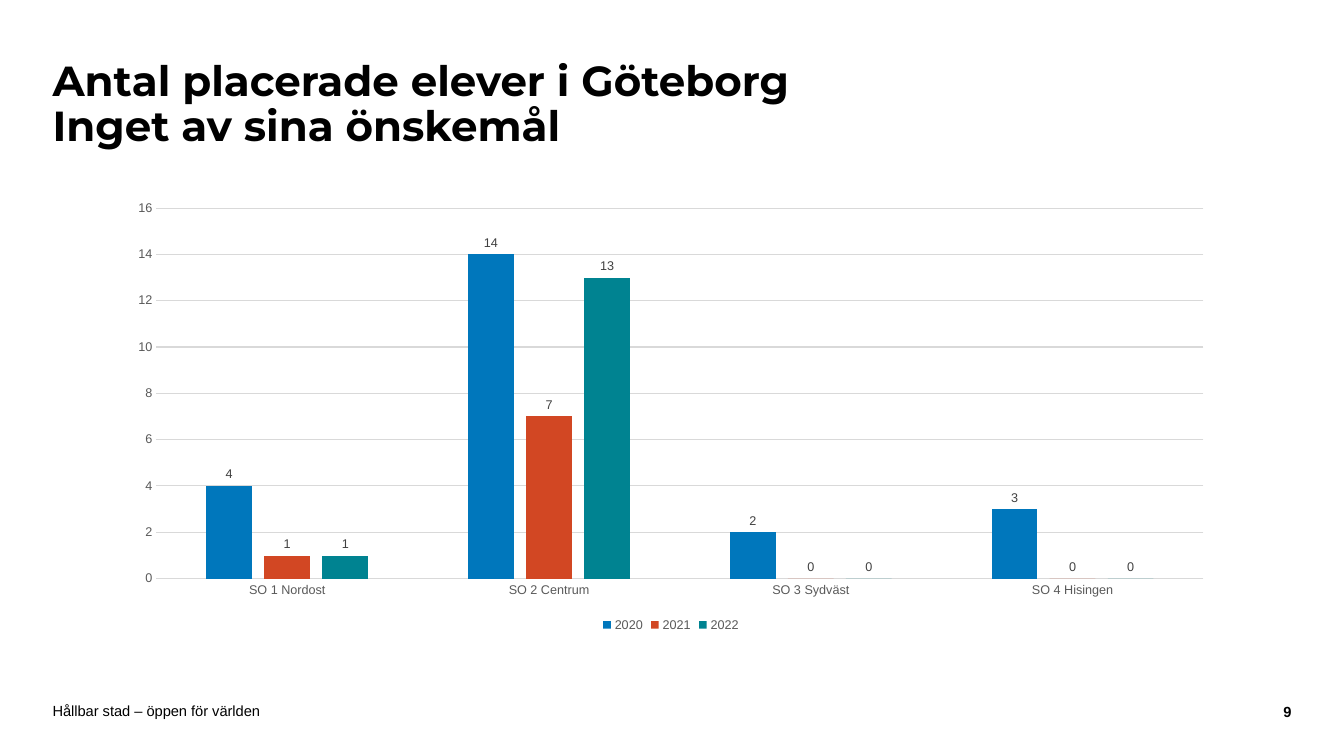
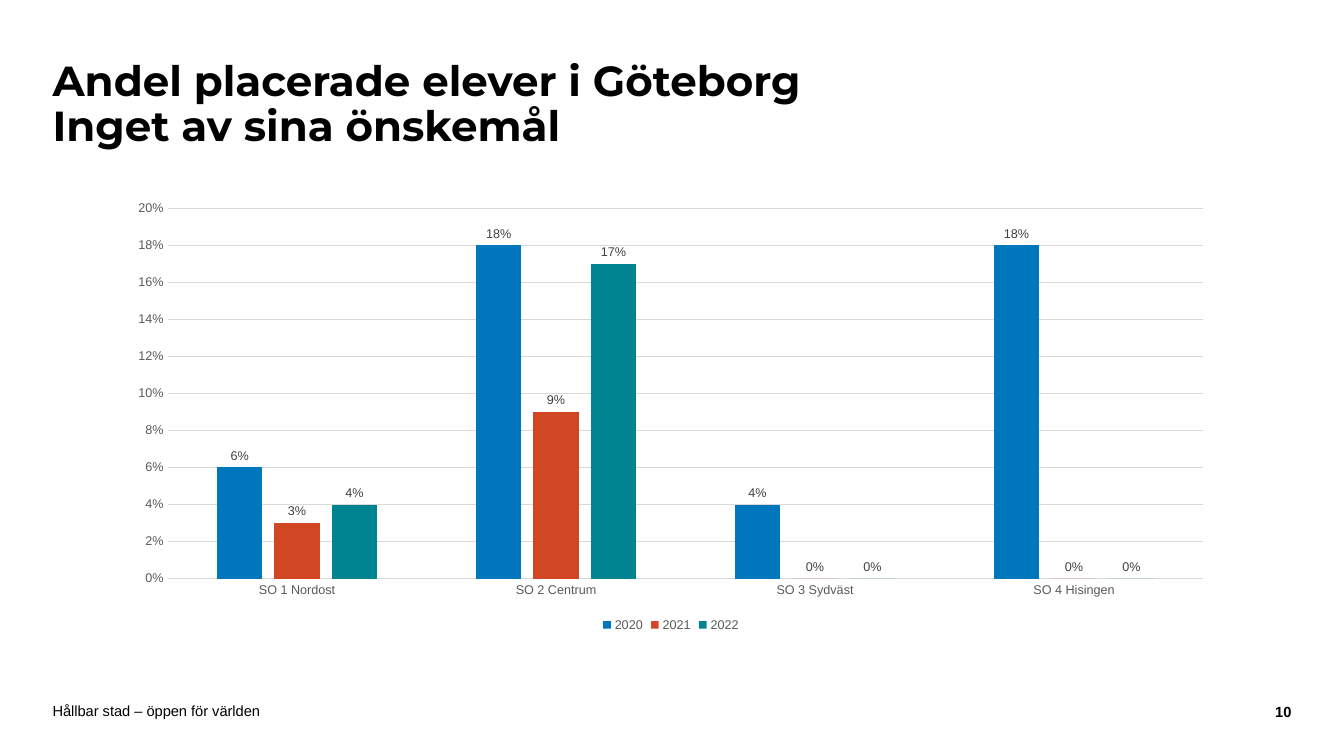
from pptx import Presentation
from pptx.chart.data import CategoryChartData
from pptx.dml.color import RGBColor
from pptx.enum.chart import XL_CHART_TYPE, XL_LABEL_POSITION, XL_LEGEND_POSITION, XL_TICK_MARK
from pptx.enum.text import MSO_ANCHOR, MSO_AUTO_SIZE, PP_ALIGN
from pptx.util import Pt

COLUMNS = XL_CHART_TYPE.COLUMN_CLUSTERED
OUTSIDE_END = XL_LABEL_POSITION.OUTSIDE_END
BOTTOM = XL_LEGEND_POSITION.BOTTOM
NO_TICK = XL_TICK_MARK.NONE
MIDDLE = MSO_ANCHOR.MIDDLE
NO_FIT = MSO_AUTO_SIZE.NONE
LEFT, RIGHT = PP_ALIGN.LEFT, PP_ALIGN.RIGHT

WHITE = RGBColor(0xFF, 0xFF, 0xFF)
BLACK = RGBColor(0x00, 0x00, 0x00)
AXIS_GRAY = RGBColor(0x59, 0x59, 0x59)
LABEL_GRAY = RGBColor(0x40, 0x40, 0x40)
GRID_GRAY = RGBColor(0xD9, 0xD9, 0xD9)
BLUE = RGBColor(0x00, 0x77, 0xBC)
RED = RGBColor(0xD2, 0x47, 0x23)
TEAL = RGBColor(0x00, 0x83, 0x91)

YEARS = [("2020", BLUE), ("2021", RED), ("2022", TEAL)]
AREAS = ["SO 1 Nordost", "SO 2 Centrum", "SO 3 Sydväst", "SO 4 Hisingen"]
SECOND_LINE = "Inget av sina önskemål"
FOOTER = "Hållbar stad – öppen för världen"
MARGIN = 37.5

PAGES = [
    (9, "Antal placerade elever i Göteborg",
     [[4, 14, 2, 3], [1, 7, 0, 0], [1, 13, 0, 0]], "0", 16, 2),
    (10, "Andel placerade elever i Göteborg",
     [[0.06, 0.18, 0.04, 0.18], [0.03, 0.09, 0, 0], [0.04, 0.17, 0, 0]], "0%", 0.2, 0.02),
]


class ReportDeck:
    body_font = "Arial"
    title_font = "Montserrat"

    def __init__(self):
        self.deck = Presentation()
        self.deck.slide_width, self.deck.slide_height = Pt(960), Pt(540)
        self.page = None

    def style(self, font, size, color, bold=False, name=body_font):
        font.name, font.size, font.bold = name, Pt(size), bold
        font.color.rgb = color

    def add_page(self, number):
        self.page = self.deck.slides.add_slide(self.deck.slide_layouts[5])
        fill = self.page.background.fill
        fill.solid()
        fill.fore_color.rgb = WHITE
        self.text(MARGIN, 502, 680, 11.5, FOOTER)
        self.text(876.5, 502.5, 46, 11.5, str(number), RIGHT, True)

    def set_frame(self, frame, inset):
        frame.margin_left = frame.margin_right = 0
        frame.margin_top = frame.margin_bottom = Pt(inset)
        frame.vertical_anchor = MIDDLE
        frame.auto_size = NO_FIT
        frame.word_wrap = True

    def text(self, left, top, width, height, words, align=LEFT, bold=False):
        box = self.page.shapes.add_textbox(Pt(left), Pt(top), Pt(width), Pt(height))
        self.set_frame(box.text_frame, 0)
        para = box.text_frame.paragraphs[0]
        para.alignment = align
        span = para.add_run()
        span.text = words
        self.style(span.font, 10.5, BLACK, bold)

    def title(self, lines):
        box = self.page.shapes.title
        box.left, box.top, box.width, box.height = Pt(MARGIN), Pt(30.25), Pt(722), Pt(90.5)
        self.set_frame(box.text_frame, 3.6)
        para = box.text_frame.paragraphs[0]
        para.alignment, para.line_spacing = LEFT, 0.9
        for index, line in enumerate(lines):
            if index:
                para.add_line_break()
            span = para.add_run()
            span.text = line
            self.style(span.font, 30, BLACK, True, self.title_font)

    def column_chart(self, rows, number_format, maximum, step):
        data = CategoryChartData(number_format=number_format)
        data.categories = AREAS
        for (year, _), values in zip(YEARS, rows):
            data.add_series(year, values)
        chart = self.page.shapes.add_chart(
            COLUMNS, Pt(83), Pt(137), Pt(792.5), Pt(317.5), data).chart
        chart.has_title = False
        self.style(chart.font, 10, BLACK)
        chart.has_legend = True
        chart.legend.position = BOTTOM
        chart.legend.include_in_layout = False
        self.style(chart.legend.font, 9, AXIS_GRAY)
        self.axes(chart, number_format, maximum, step)
        plot = chart.plots[0]
        plot.gap_width, plot.overlap = 219, -27
        plot.vary_by_categories = False
        for series, (_, color) in zip(plot.series, YEARS):
            series.format.fill.solid()
            series.format.fill.fore_color.rgb = color
            labels = series.data_labels
            labels.show_value = True
            labels.position = OUTSIDE_END
            labels.number_format = number_format
            labels.number_format_is_linked = False
            self.style(labels.font, 9, LABEL_GRAY)

    def axes(self, chart, number_format, maximum, step):
        category, value = chart.category_axis, chart.value_axis
        for axis in (category, value):
            axis.major_tick_mark = axis.minor_tick_mark = NO_TICK
            self.style(axis.tick_labels.font, 9, AXIS_GRAY)
        value.minimum_scale, value.maximum_scale, value.major_unit = 0, maximum, step
        value.tick_labels.number_format = number_format
        value.tick_labels.number_format_is_linked = False
        value.has_major_gridlines = True
        value.format.line.fill.background()
        for line in (category.format.line, value.major_gridlines.format.line):
            line.width = Pt(0.75)
            line.color.rgb = GRID_GRAY


def main():
    report = ReportDeck()
    for number, heading, rows, number_format, maximum, step in PAGES:
        report.add_page(number)
        report.title([heading, SECOND_LINE])
        report.column_chart(rows, number_format, maximum, step)
    report.deck.save("out.pptx")


if __name__ == "__main__":
    main()
